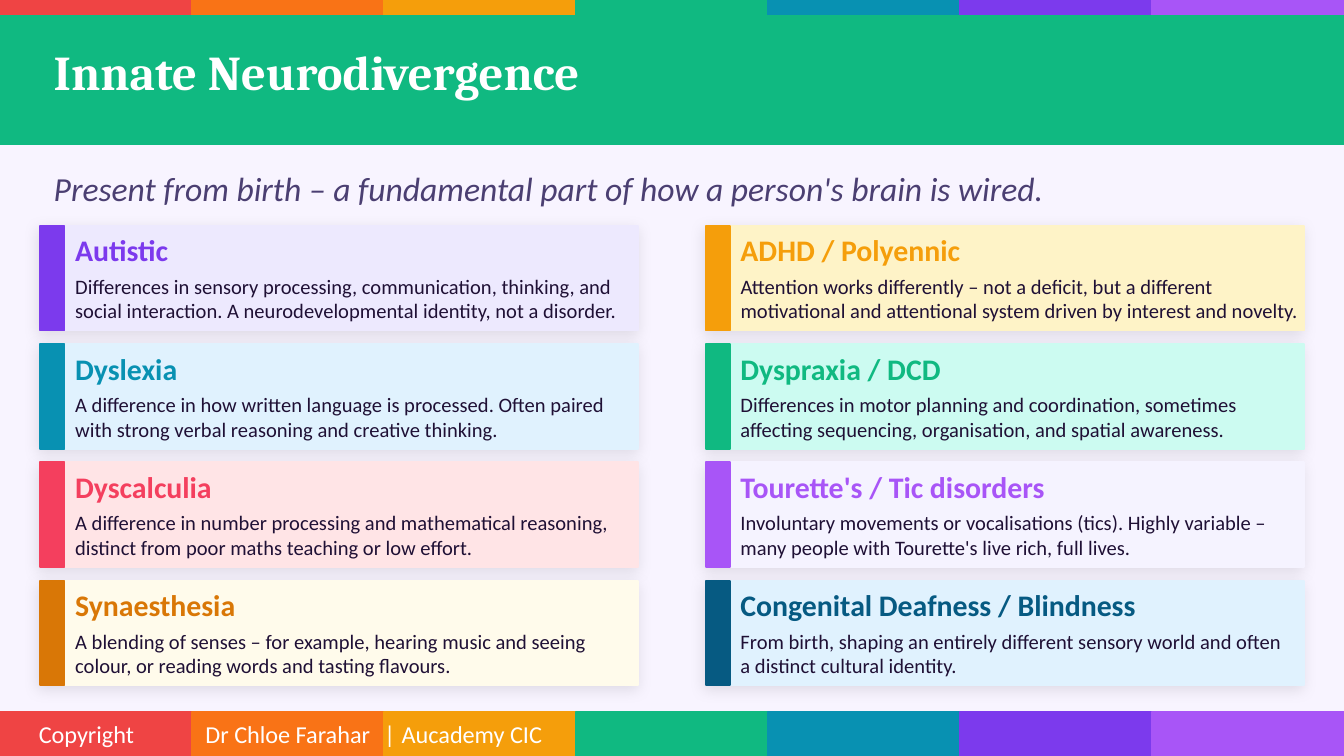
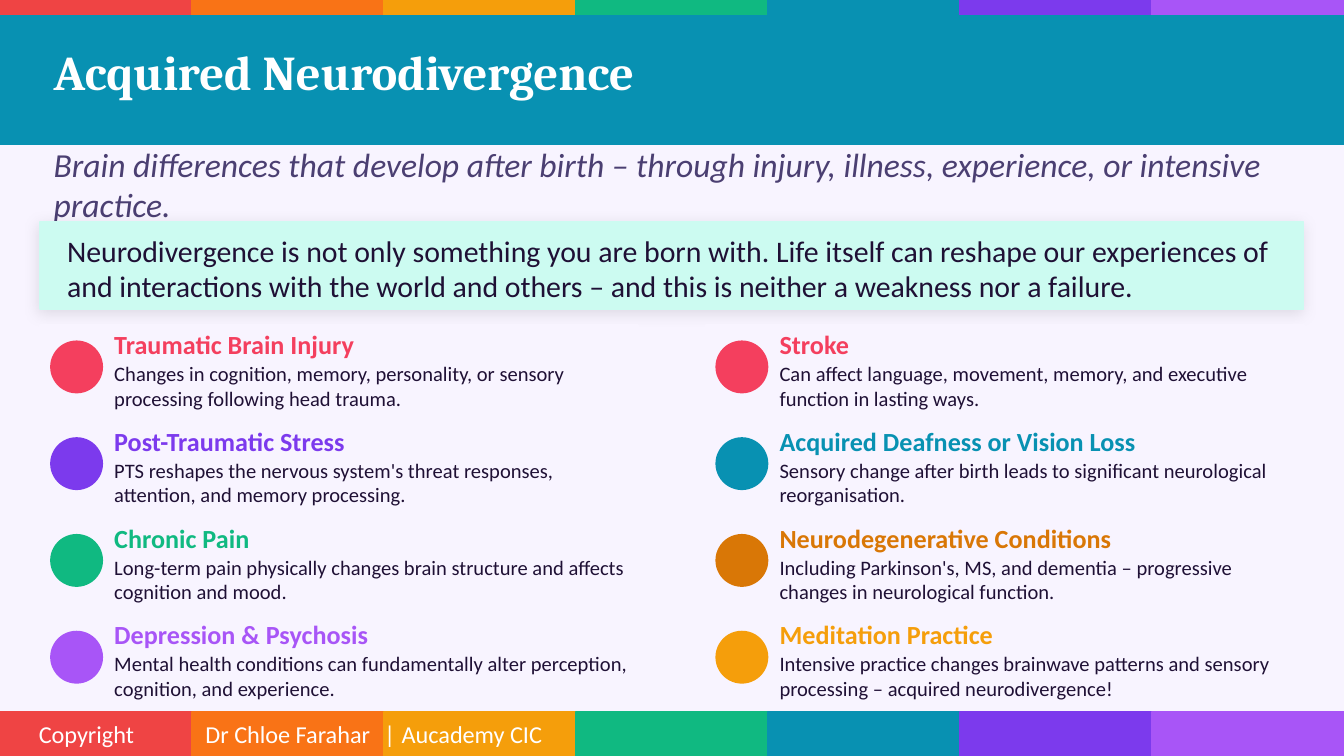
from dataclasses import dataclass

from lxml import etree
from pptx import Presentation
from pptx import util as u
from pptx.dml.color import RGBColor
from pptx.enum import shapes, text
from pptx.oxml import ns

# The grid has 100 columns by 56.25 rows of square cells.
COLS, ROWS = 100, 56.25
CELL = u.Inches(0.1)

RED = RGBColor(0xEF, 0x44, 0x44)
ORANGE = RGBColor(0xF9, 0x73, 0x16)
AMBER = RGBColor(0xF5, 0x9E, 0x0B)
GREEN = RGBColor(0x10, 0xB9, 0x81)
TEAL = RGBColor(0x08, 0x91, 0xB2)
VIOLET = RGBColor(0x7C, 0x3A, 0xED)
PURPLE = RGBColor(0xA8, 0x55, 0xF7)
ROSE = RGBColor(0xF4, 0x3F, 0x5E)
OCHRE = RGBColor(0xD9, 0x77, 0x06)
NAVY = RGBColor(0x06, 0x5A, 0x82)
WHITE = RGBColor(0xFF, 0xFF, 0xFF)
PAGE = RGBColor(0xF8, 0xF4, 0xFF)
INK = RGBColor(0x1F, 0x10, 0x35)
PLUM = RGBColor(0x4B, 0x3F, 0x72)
LILAC = RGBColor(0xED, 0xE9, 0xFE)
CREAM = RGBColor(0xFE, 0xF3, 0xC7)
SKY = RGBColor(0xE0, 0xF2, 0xFE)
MINT = RGBColor(0xCC, 0xFB, 0xF1)
BLUSH = RGBColor(0xFF, 0xE4, 0xE6)
MIST = RGBColor(0xF5, 0xF3, 0xFF)
IVORY = RGBColor(0xFF, 0xFB, 0xEB)

RAINBOW = (RED, ORANGE, AMBER, GREEN, TEAL, VIOLET, PURPLE)
RECT = shapes.MSO_SHAPE.RECTANGLE
OVAL = shapes.MSO_SHAPE.OVAL

SIDE, GUTTER = 3, 5
CARD_W = (COLS - 2 * SIDE - GUTTER) / 2
CREDIT = "Copyright\tDr Chloe Farahar\t|\tAucademy CIC"
STOPS = (12.4, 25.7, 27)


@dataclass(frozen=True)
class Box:
    """A place on the grid, in cells."""
    left: float
    top: float
    width: float
    height: float

    def emu(self) -> list[u.Emu]:
        return [u.Emu(round(n * CELL))
                for n in (self.left, self.top, self.width, self.height)]


@dataclass(frozen=True)
class Card:
    name: str
    body: str
    hue: RGBColor
    tint: RGBColor
    room: float = 41  # width of the body text


@dataclass(frozen=True)
class Point:
    name: str
    body: str
    hue: RGBColor


CARDS = (
    Card("Autistic",
         "Differences in sensory processing, communication, thinking, and "
         "social interaction. A neurodevelopmental identity, not a disorder.",
         VIOLET, LILAC),
    Card("ADHD / Polyennic",
         "Attention works differently – not a deficit, but a different "
         "motivational and attentional system driven by interest and novelty.",
         AMBER, CREAM, 41.9),
    Card("Dyslexia",
         "A difference in how written language is processed. Often paired "
         "with strong verbal reasoning and creative thinking.", TEAL, SKY),
    Card("Dyspraxia / DCD",
         "Differences in motor planning and coordination, sometimes "
         "affecting sequencing, organisation, and spatial awareness.",
         GREEN, MINT),
    Card("Dyscalculia",
         "A difference in number processing and mathematical reasoning, "
         "distinct from poor maths teaching or low effort.", ROSE, BLUSH),
    Card("Tourette's / Tic disorders",
         "Involuntary movements or vocalisations (tics). Highly variable – "
         "many people with Tourette's live rich, full lives.", PURPLE, MIST),
    Card("Synaesthesia",
         "A blending of senses – for example, hearing music and seeing "
         "colour, or reading words and tasting flavours.", OCHRE, IVORY),
    Card("Congenital Deafness / Blindness",
         "From birth, shaping an entirely different sensory world and often "
         "a distinct cultural identity.", NAVY, SKY),
)

POINTS = (
    Point("Traumatic Brain Injury",
          "Changes in cognition, memory, personality, or sensory "
          "processing following head trauma.", ROSE),
    Point("Stroke",
          "Can affect language, movement, memory, and executive "
          "function in lasting ways.", ROSE),
    Point("Post-Traumatic Stress",
          "PTS reshapes the nervous system's threat responses, "
          "attention, and memory processing.", VIOLET),
    Point("Acquired Deafness or Vision Loss",
          "Sensory change after birth leads to significant neurological "
          "reorganisation.", TEAL),
    Point("Chronic Pain",
          "Long-term pain physically changes brain structure and affects "
          "cognition and mood.", GREEN),
    Point("Neurodegenerative Conditions",
          "Including Parkinson's, MS, and dementia – progressive "
          "changes in neurological function.", OCHRE),
    Point("Depression & Psychosis",
          "Mental health conditions can fundamentally alter perception, "
          "cognition, and experience.", PURPLE),
    Point("Meditation Practice",
          "Intensive practice changes brainwave patterns and sensory "
          "processing – acquired neurodivergence!", AMBER),
)


def cast(shape) -> None:
    """Give a shape a soft, faint shadow."""
    effects = shape.element.spPr.find(ns.qn("a:effectLst"))
    outer = etree.SubElement(
        effects, ns.qn("a:outerShdw"), blurRad=str(u.Pt(8)),
        dist=str(u.Pt(2)), dir=str(135 * 60000), algn="bl", rotWithShape="0")
    black = etree.SubElement(outer, ns.qn("a:srgbClr"), val="000000")
    etree.SubElement(black, ns.qn("a:alpha"), val="10000")


def block(slide, box: Box, hue: RGBColor, kind=RECT, shade: bool = False) -> None:
    shape = slide.shapes.add_shape(kind, *box.emu())
    shape.shadow.inherit = False
    shape.fill.solid()
    shape.fill.fore_color.rgb = hue
    shape.line.color.rgb = hue
    shape.line.width = u.Pt(1)
    if shade:
        cast(shape)


def write(slide, box: Box, words: str, *, size: float = 11,
          hue: RGBColor = INK, font: str = "Calibri", bold: bool = False,
          slant: bool = False, inset: bool = False,
          stops: tuple[float, ...] = ()) -> None:
    frame = slide.shapes.add_textbox(*box.emu()).text_frame
    frame.word_wrap = True
    frame.vertical_anchor = text.MSO_ANCHOR.MIDDLE
    if not inset:
        frame.margin_left = frame.margin_right = 0
        frame.margin_top = frame.margin_bottom = 0
    para = frame.paragraphs[0]
    if stops:
        tabs = etree.SubElement(para._p.get_or_add_pPr(), ns.qn("a:tabLst"))
        for stop in stops:
            etree.SubElement(tabs, ns.qn("a:tab"),
                             pos=str(round(stop * CELL)), algn="l")
    run = para.add_run()
    run.text = words
    run.font.name = font
    run.font.size = u.Pt(size)
    run.font.color.rgb = hue
    run.font.bold = bold
    run.font.italic = slant


def stripe(slide, top: float, height: float) -> None:
    """Draw the rainbow across the slide."""
    width = COLS / len(RAINBOW)
    for i, hue in enumerate(RAINBOW):
        block(slide, Box(i * width, top, width, height), hue)


def spot(index: int, top: float, pitch: float) -> tuple[float, float]:
    """Return the left and top of an item in two columns."""
    row, col = divmod(index, 2)
    return SIDE + col * (CARD_W + GUTTER), top + row * pitch


def start(deck, title: str, lead: str, hue: RGBColor, lead_top: float):
    slide = deck.slides.add_slide(deck.slide_layouts[6])
    slide.background.fill.solid()
    slide.background.fill.fore_color.rgb = PAGE
    stripe(slide, 0, 1.2)
    block(slide, Box(0, 1.2, COLS, 9.5), hue)
    write(slide, Box(4, 1.8, 92, 7), title, size=26, hue=WHITE,
          font="Cambria", bold=True)
    write(slide, Box(4, lead_top, 92, 4), lead, size=18, hue=PLUM, slant=True)
    return slide


def finish(slide) -> None:
    stripe(slide, 53, ROWS - 53)
    write(slide, Box(1.9, 52.6, 82.8, 4), CREDIT, size=13, hue=WHITE,
          inset=True, stops=STOPS)


def draw_card(slide, card: Card, left: float, top: float) -> None:
    block(slide, Box(left, top, CARD_W, 7.8), card.tint, shade=True)
    block(slide, Box(left, top, 1.8, 7.8), card.hue)
    write(slide, Box(left + 2.6, top + 0.4, 41, 2.8), card.name,
          size=16, hue=card.hue, bold=True)
    write(slide, Box(left + 2.6, top + 3.2, card.room, 4.4), card.body)


def draw_point(slide, point: Point, left: float, top: float) -> None:
    block(slide, Box(left, top, CARD_W, 6.3), PAGE)
    block(slide, Box(left + 0.8, top + 1.2, 3.8, 3.8), point.hue, OVAL)
    write(slide, Box(left + 5.5, top + 0.2, 38.2, 2.4), point.name,
          size=14, hue=point.hue, bold=True)
    write(slide, Box(left + 5.5, top + 2.8, 38.2, 3.4), point.body)


def innate(deck) -> None:
    slide = start(deck, "Innate Neurodivergence",
                  "Present from birth – a fundamental part of how a "
                  "person's brain is wired.", GREEN, 12)
    for i, card in enumerate(CARDS):
        draw_card(slide, card, *spot(i, 16.8, 8.8))
    finish(slide)


def acquired(deck) -> None:
    slide = start(deck, "Acquired Neurodivergence",
                  "Brain differences that develop after birth – through "
                  "injury, illness, experience, or intensive practice.",
                  TEAL, 11.7)
    block(slide, Box(SIDE, 16.5, COLS - 2 * SIDE, 6.5), MINT, shade=True)
    write(slide, Box(5, 17.2, 91, 5.5),
          "Neurodivergence is not only something you are born with. Life "
          "itself can reshape our experiences of and interactions with the "
          "world and others – and this is neither a weakness nor a failure.",
          size=16)
    for i, point in enumerate(POINTS):
        draw_point(slide, point, *spot(i, 24.2, 7.2))
    finish(slide)


def main() -> None:
    deck = Presentation()
    deck.slide_width = u.Emu(COLS * CELL)
    deck.slide_height = u.Emu(round(ROWS * CELL))
    innate(deck)
    acquired(deck)
    deck.save("out.pptx")


if __name__ == "__main__":
    main()
